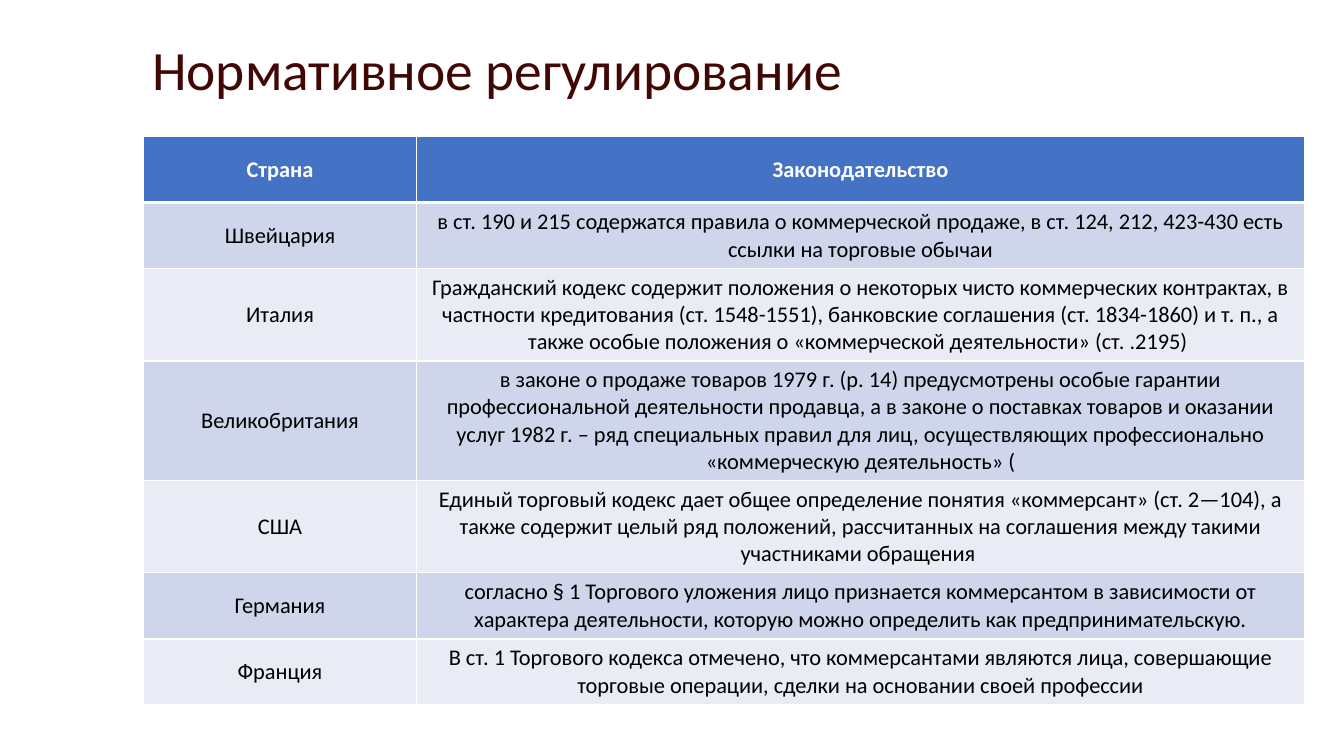
from dataclasses import dataclass

from pptx import Presentation
from pptx.dml.color import RGBColor
from pptx.enum import text
from pptx.oxml import parse_xml
from pptx.oxml.ns import nsdecls
from pptx.util import Pt


@dataclass(frozen=True)
class Theme:
    font: str = "Calibri"
    title_size: float = 39.6
    cell_size: float = 16
    title: str = "400704"
    header: str = "4472C4"
    bands: tuple[str, str] = ("CFD5EA", "E9EBF5")
    light: str = "FFFFFF"
    dark: str = "000000"


@dataclass(frozen=True)
class Law:
    country: str
    rules: str


THEME = Theme()
COLUMN_WIDTHS = (195.1, 634.3)
ROW_HEIGHT = 47.2
HEADER = Law("Страна", "Законодательство")
LAWS = [
    Law("Швейцария",
        "в ст. 190 и 215 содержатся правила о коммерческой продаже, "
        "в ст. 124, 212, 423-430 есть ссылки на торговые обычаи"),
    Law("Италия",
        "Гражданский кодекс содержит положения о некоторых чисто коммерческих "
        "контрактах, в частности кредитования (ст. 1548-1551), банковские "
        "соглашения (ст. 1834-1860) и т. п., а также особые положения "
        "о «коммерческой деятельности» (ст. .2195) "),
    Law("Великобритания",
        "в законе о продаже товаров 1979 г. (р. 14) предусмотрены особые гарантии "
        "профессиональной деятельности продавца, а в законе о поставках товаров "
        "и оказании услуг 1982 г. – ряд специальных правил для лиц, "
        "осуществляющих профессионально «коммерческую деятельность» ("),
    Law("США",
        "Единый торговый кодекс дает общее определение понятия «коммерсант» "
        "(ст. 2—104), а также содержит целый ряд положений, рассчитанных "
        "на соглашения между такими участниками обращения "),
    Law("Германия",
        "согласно § 1 Торгового уложения лицо признается коммерсантом "
        "в зависимости от характера деятельности, которую можно определить "
        "как предпринимательскую."),
    Law("Франция",
        "В ст. 1 Торгового кодекса отмечено, что коммерсантами являются лица, "
        "совершающие торговые операции, сделки на основании своей профессии"),
]


def set_font(para, size: float, color: str, bold: bool = False) -> None:
    para.font.name = THEME.font
    para.font.size = Pt(size)
    para.font.bold = bold
    para.font.color.rgb = RGBColor.from_string(color)


def add_borders(cell, top: float, bottom: float) -> None:
    properties = cell._tc.get_or_add_tcPr()
    for side, width in (("L", 1), ("R", 1), ("T", top), ("B", bottom)):
        properties.append(parse_xml(
            f'<a:ln{side} {nsdecls("a")} w="{Pt(width)}"><a:solidFill>'
            f'<a:srgbClr val="{THEME.light}"/></a:solidFill></a:ln{side}>'))


def fill_row(table, index: int, law: Law) -> None:
    is_header = index == 0
    fill = THEME.header if is_header else THEME.bands[(index - 1) % 2]
    color = THEME.light if is_header else THEME.dark
    for cell, words in zip(table.rows[index].cells, (law.country, law.rules)):
        add_borders(cell, top=3 if index == 1 else 1, bottom=3 if is_header else 1)
        cell.fill.solid()
        cell.fill.fore_color.rgb = RGBColor.from_string(fill)
        cell.vertical_anchor = text.MSO_ANCHOR.MIDDLE
        cell.text = words
        para = cell.text_frame.paragraphs[0]
        para.alignment = text.PP_ALIGN.CENTER
        set_font(para, THEME.cell_size, color, bold=is_header)


def add_title(page, words: str) -> None:
    title = page.shapes.title
    title.left, title.top, title.width, title.height = map(Pt, (101.5, 31, 828, 41))
    frame = title.text_frame
    frame.text = words
    frame.word_wrap = True
    frame.auto_size = text.MSO_AUTO_SIZE.NONE
    frame.vertical_anchor = text.MSO_ANCHOR.MIDDLE
    para = frame.paragraphs[0]
    para.alignment = text.PP_ALIGN.LEFT
    para.line_spacing = 0.9
    set_font(para, THEME.title_size, THEME.title)


def add_law_table(page, laws: list[Law]) -> None:
    rows = [HEADER, *laws]
    table = page.shapes.add_table(
        len(rows), len(COLUMN_WIDTHS), Pt(102.5), Pt(97.5),
        Pt(sum(COLUMN_WIDTHS)), Pt(ROW_HEIGHT * len(rows))).table
    for column, width in zip(table.columns, COLUMN_WIDTHS):
        column.width = Pt(width)
    for index, law in enumerate(rows):
        fill_row(table, index, law)


def main() -> None:
    deck = Presentation()
    deck.slide_width, deck.slide_height = Pt(960), Pt(540)
    page = deck.slides.add_slide(deck.slide_layouts[5])  # title only
    add_title(page, "Нормативное регулирование")
    add_law_table(page, LAWS)
    deck.save("out.pptx")


if __name__ == "__main__":
    main()
